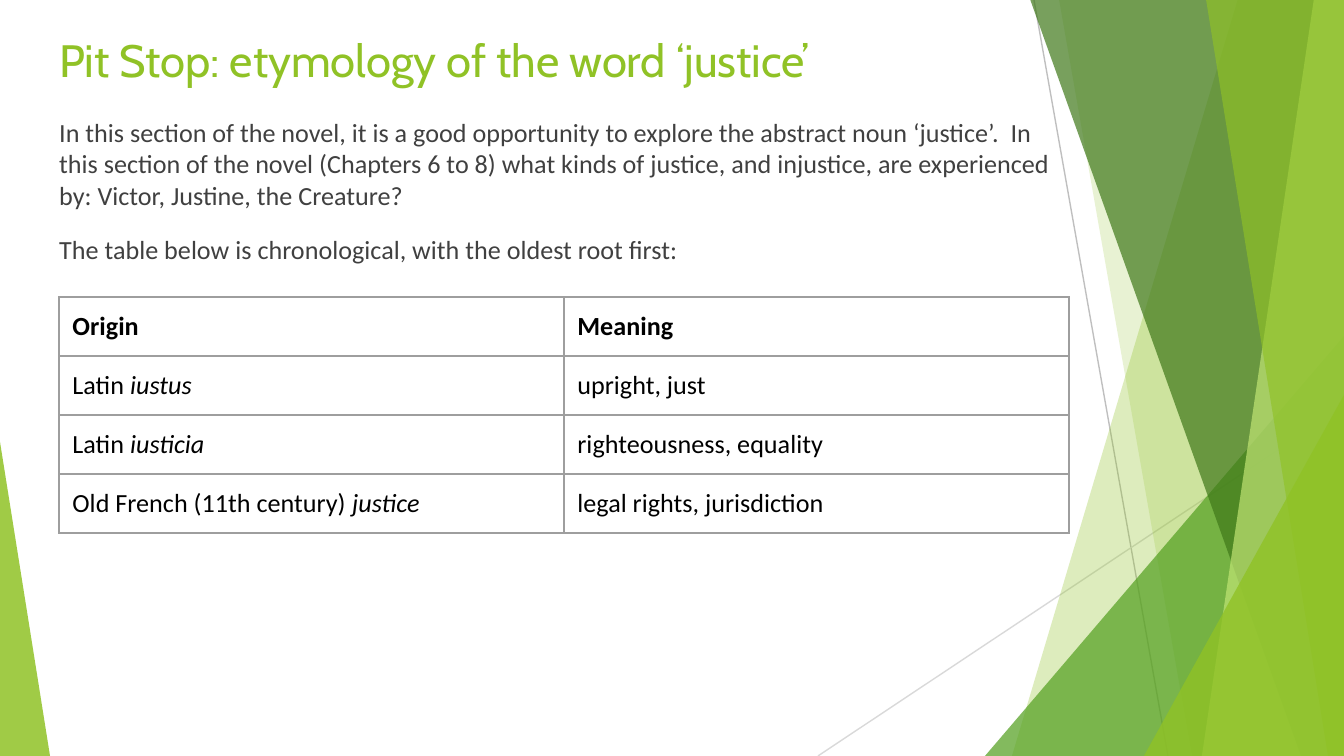
from lxml import etree
from pptx import Presentation
from pptx.dml.color import RGBColor
from pptx.enum.shapes import MSO_CONNECTOR, MSO_SHAPE
from pptx.enum.text import MSO_ANCHOR
from pptx.oxml import parse_xml
from pptx.oxml.ns import nsdecls, qn
from pptx.util import Pt

PX = 914400 / 134.4  # EMU in one px
WIDTH, HEIGHT = 1344, 756
LIME, GREEN, FOREST, PALE = "90C226", "54A021", "3F7819", "C0E474"


def emu(*lengths):
    return [round(length * PX) for length in lengths]


def set_color(color_format, value):
    color_format.rgb = RGBColor.from_string(value)


presentation = Presentation()
presentation.slide_width, presentation.slide_height = emu(WIDTH, HEIGHT)
slide = presentation.slides.add_slide(presentation.slide_layouts[6])
shapes = slide.shapes

# Thin crossing lines
for ends, color in [((1034, 0, 1168, 756), "BFBFBF"),
                    ((1344, 406, 818, 756), "D9D9D9")]:
    line = shapes.add_connector(MSO_CONNECTOR.STRAIGHT, *emu(*ends))
    line.line.width = Pt(0.75)
    set_color(line.line.color, color)
    etree.SubElement(line._element.spPr, qn("a:effectLst"))

# Translucent facets, back to front: a band is (top x, bottom x) and reaches
# the right edge; a triangle is (left, top, width, height, apex position)
facets = [
    ((1238, 1012), LIME, 30),
    ((1059, 1192), LIME, 20),
    ((985, 336, 359, 420, 1), GREEN, 72),
    ((1030, 1301), FOREST, 70),
    ((1314, 1202), PALE, 70),
    ((1206, 1328), LIME, 65),
    ((1144, 395, 200, 361, 1), LIME, 80),
    ((0, 442, 50, 314, 0), LIME, 85),
]
for geometry, color, opacity in facets:
    if len(geometry) == 2:
        top_x, bottom_x = geometry
        builder = shapes.build_freeform(top_x, -1, scale=PX)
        builder.add_line_segments([(WIDTH, -1), (WIDTH, HEIGHT), (bottom_x, HEIGHT)])
        facet = builder.convert_to_shape()
    else:
        *box, apex = geometry
        facet = shapes.add_shape(MSO_SHAPE.ISOSCELES_TRIANGLE, *emu(*box))
        facet.adjustments[0] = apex
    facet.shadow.inherit = False
    facet.line.fill.background()
    facet.fill.solid()
    set_color(facet.fill.fore_color, color)
    rgb = facet.fill._xPr.find(".//" + qn("a:srgbClr"))
    etree.SubElement(rgb, qn("a:alpha"), val=str(opacity * 1000))

# Title and body text
texts = [
    ((46, 19, 1253, 84), "Cabin", 24.3, LIME,
     ["Pit Stop: etymology of the word ‘justice’"]),
    ((46, 103, 1042, 569), "Calibri", 14, "404040",
     ["In this section of the novel, it is a good opportunity to explore the "
      "abstract noun ‘justice’.  In this section of the novel (Chapters 6 to 8) "
      "what kinds of justice, and injustice, are experienced by: Victor, "
      "Justine, the Creature?",
      "The table below is chronological, with the oldest root first:"]),
]
for box, font_name, size, color, paragraphs in texts:
    frame = shapes.add_textbox(*emu(*box)).text_frame
    frame.word_wrap = True
    frame.vertical_anchor = MSO_ANCHOR.TOP
    frame.margin_left, frame.margin_top, frame.margin_right, frame.margin_bottom = emu(*[13.44] * 4)
    for index, text in enumerate(paragraphs):
        paragraph = frame.add_paragraph() if index else frame.paragraphs[0]
        if index:
            paragraph.space_before = Pt(12)
        run = paragraph.add_run()
        run.text = text
        run.font.name, run.font.size = font_name, Pt(size)
        set_color(run.font.color, color)

# Etymology table: each cell is (plain text, italic text)
rows = [
    [("Origin", ""), ("Meaning", "")],
    [("Latin ", "iustus"), ("upright, just", "")],
    [("Latin ", "iusticia"), ("righteousness, equality", "")],
    [("Old French (11th century) ", "justice"), ("legal rights, jurisdiction", "")],
]
ROW_HEIGHT = 59
table = shapes.add_table(len(rows), 2, *emu(59, 297, 1010, ROW_HEIGHT * len(rows))).table
table.first_row = table.horz_banding = False
for row_index, row in enumerate(rows):
    for column_index, parts in enumerate(row):
        cell = table.cell(row_index, column_index)
        cell.fill.background()
        cell.margin_left, cell.margin_top, cell.margin_right, cell.margin_bottom = emu(*[13.44] * 4)
        properties = cell._tc.get_or_add_tcPr()
        for position, side in enumerate("LRTB"):
            properties.insert(position, parse_xml(
                f'<a:ln{side} {nsdecls("a")} w="{Pt(0.75)}"><a:solidFill>'
                f'<a:srgbClr val="9E9E9E"/></a:solidFill></a:ln{side}>'))
        for text, italic in zip(parts, (False, True)):
            if text:
                run = cell.text_frame.paragraphs[0].add_run()
                run.text = text
                run.font.name, run.font.size = "Calibri", Pt(14)
                run.font.bold, run.font.italic = row_index == 0, italic
                set_color(run.font.color, "000000")

presentation.save("out.pptx")
